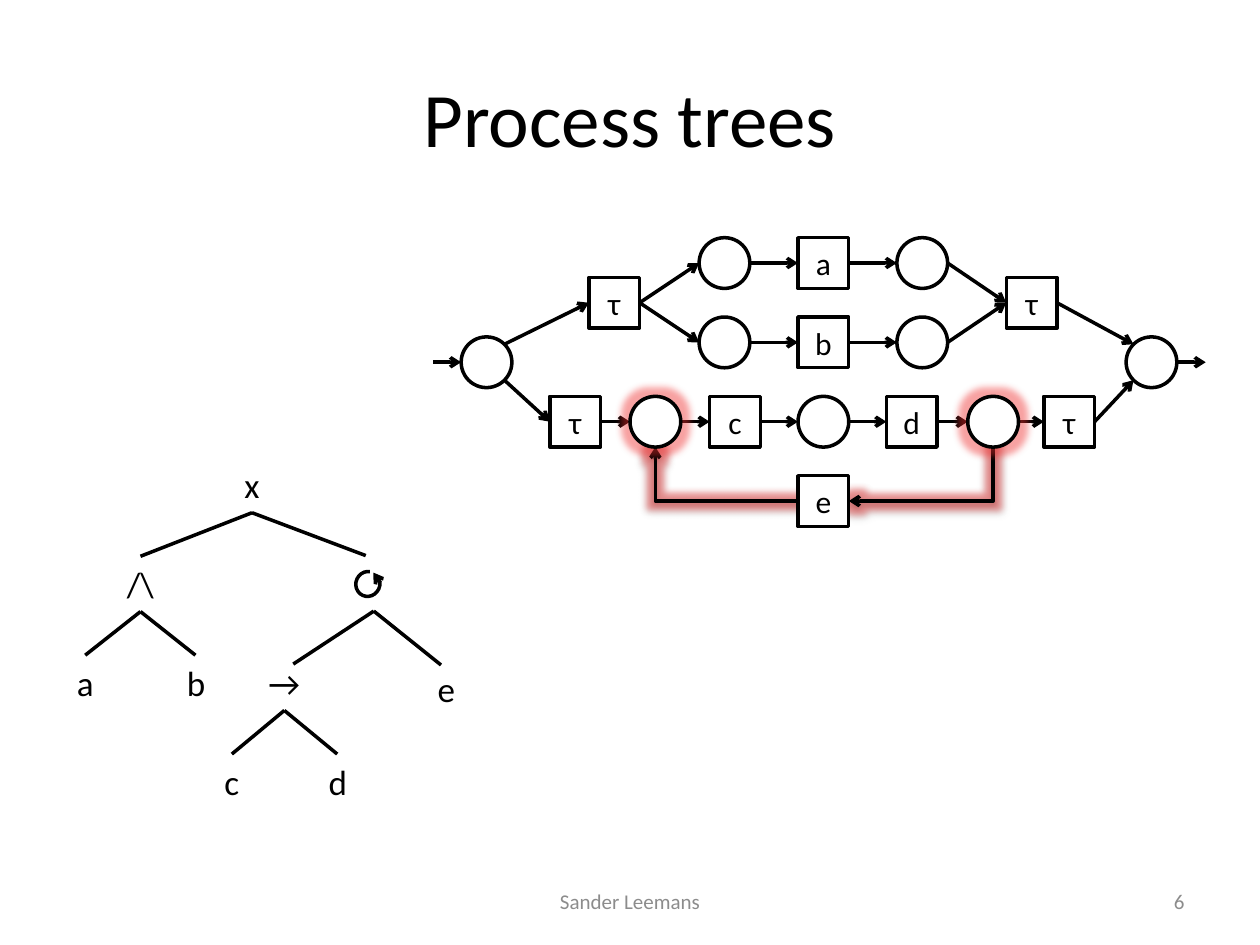
"""Build the process tree slide with its matching Petri net."""
from lxml import etree
from pptx import Presentation
from pptx import util as u
from pptx.dml.color import RGBColor
from pptx.enum import shapes, text
from pptx.oxml.ns import qn

COLOURS = {"ink": "000000", "paper": "FFFFFF", "muted": "8C8C8C", "glow": "F03030"}
TOP, LEFT, BOTTOM, RIGHT = range(4)
NODE, LABEL = 29, 31.6
ALIGN = text.PP_ALIGN


def rgb(name):
    return RGBColor.from_string(COLOURS[name])


def child(parent, tag, **attributes):
    element = etree.SubElement(parent, qn(tag))
    for key, value in attributes.items():
        element.set(key, str(value))
    return element


def write(shape, words, size=20, colour="ink", align=ALIGN.CENTER,
          anchor=text.MSO_ANCHOR.MIDDLE, wrap=True):
    frame = shape.text_frame
    frame.word_wrap, frame.vertical_anchor = wrap, anchor
    paragraph = frame.paragraphs[0]
    paragraph.alignment = align
    run = paragraph.add_run()
    run.text = words
    run.font.size, run.font.name = u.Pt(size), "Calibri"
    run.font.color.rgb = rgb(colour)


class Board:
    def __init__(self, slide, stroke=2):
        self.shapes, self.stroke = slide.shapes, stroke

    def outline(self, shape):
        shape.line.color.rgb = rgb("ink")
        shape.line.width = u.Pt(self.stroke)

    def glow(self, effects):
        colour = child(child(effects, "a:glow", rad=u.Pt(8)), "a:srgbClr", val=COLOURS["glow"])
        child(colour, "a:alpha", val=45000)

    def caption(self, words, left, top, width, height, **form):
        box = self.shapes.add_textbox(*map(u.Pt, (left, top, width, height)))
        write(box, words, **form)
        return box

    def label(self, words, x, top, width=24):
        box = self.caption(words, x - width / 2, top, width, LABEL,
                           anchor=text.MSO_ANCHOR.TOP, wrap=False)
        box.text_frame.auto_size = text.MSO_AUTO_SIZE.SHAPE_TO_FIT_TEXT
        return box

    def node(self, kind, x, y, words="", glowing=False):
        node = self.shapes.add_shape(kind, u.Pt(x - NODE / 2), u.Pt(y - NODE / 2),
                                     u.Pt(NODE), u.Pt(NODE))
        node.shadow.inherit = False
        node.fill.solid()
        node.fill.fore_color.rgb = rgb("paper")
        self.outline(node)
        if words:
            write(node, words, size=18)
        if glowing:
            self.glow(node._element.spPr.find(qn("a:effectLst")))
        return node

    def loop(self, x, y, width, height):
        loop = self.shapes.add_shape(shapes.MSO_SHAPE.ARC, u.Pt(x - width / 2),
                                     u.Pt(y - height / 2), u.Pt(width), u.Pt(height))
        for index, degrees in enumerate((180.44, 163.68)):
            loop.adjustments[index] = degrees * 0.6
        loop.rotation = 115
        loop.shadow.inherit = False
        loop.fill.background()
        self.outline(loop)
        child(loop.line._get_or_add_ln(), "a:headEnd", type="arrow")

    def line(self, begin, end, source=None, target=None, arrow=False,
             kind=shapes.MSO_CONNECTOR.STRAIGHT):
        line = self.shapes.add_connector(kind, *map(u.Pt, (*begin, *end)))
        if source:
            line.begin_connect(*source)
        if target:
            line.end_connect(*target)
        self.outline(line)
        if arrow:
            child(line.line._get_or_add_ln(), "a:tailEnd", type="arrow")
        child(line._element.spPr, "a:effectLst")
        return line

    def bend(self, begin, end, rotation=0):
        bend = self.line(begin, end, arrow=True, kind=shapes.MSO_CONNECTOR.ELBOW)
        properties = bend._element.spPr
        properties.find(qn("a:prstGeom")).set("prst", "bentConnector2")
        if rotation:
            properties.find(qn("a:xfrm")).set("rot", str(rotation * 60000))
        effects = properties.find(qn("a:effectLst"))
        self.glow(effects)
        shadow = child(effects, "a:outerShdw", blurRad=u.Pt(3.1), dist=u.Pt(1.6),
                       dir=90 * 60000, rotWithShape=0)
        child(child(shadow, "a:srgbClr", val=COLOURS["ink"]), "a:alpha", val=38000)


def draw_tree(board):
    top = [261.4 + 56.5 * level for level in range(4)]
    labels = {words: board.label(words, x, y, width) for words, x, y, width in (
        ("x", 144, top[0], 24), ("/\\", 80.3, top[1], 30), ("a", 48.7, top[2], 24),
        ("b", 111.7, top[2], 24), ("→", 162.5, top[2], 33), ("e", 255, 378, 24),
        ("c", 132.5, top[3], 24), ("d", 192.7, top[3], 24))}
    for parent, *children in (("x", "/\\"), ("/\\", "a", "b"), ("→", "c", "d")):
        for name in children:
            board.line((0, 0), (0, 0), (labels[parent], BOTTOM), (labels[name], TOP))
    board.line((144, 292.5), (209, 317.5), source=(labels["x"], BOTTOM))
    for end in ((167.6, 379.5), (252, 380)):
        board.line((213.6, 349.2), end)
    board.loop(210.2, 333.7, 14.4, 13.7)


def draw_net(board):
    row = [150.3 + 45.35 * index for index in range(4)]
    middle, split, half = 207, 173, NODE / 2
    places = {"start": (278, middle), "end": (658, middle),
              "before a": (414, row[0]), "after a": (527, row[0]),
              "before b": (414, row[1]), "after b": (527, row[1]),
              "before c": (374.5, row[2]), "after c": (470.5, row[2]),
              "after d": (567.5, row[2])}
    steps = {"fork": ("τ", 351, split), "join": ("τ", 589.5, split),
             "enter": ("τ", 328.7, row[2]), "leave": ("τ", 611, row[2]),
             "a": ("a", 470.5, row[0]), "b": ("b", 470.5, row[1]),
             "c": ("c", 420, row[2]), "d": ("d", 521, row[2]),
             "e": ("e", 470.5, row[3])}

    e_x, e_y = steps["e"][1:]
    left, right = places["before c"][0], places["after d"][0]
    rim_y = row[2] + half
    centre_x, centre_y = (right + e_x + half) / 2, (rim_y + e_y) / 2
    across, down = (right - e_x - half) / 2, (e_y - rim_y) / 2
    board.bend((centre_x - down, centre_y - across), (centre_x + down, centre_y + across), 90)
    board.bend((e_x - half, e_y), (left, rim_y))

    boxes = {name: board.node(shapes.MSO_SHAPE.RECTANGLE, x, y, words)
             for name, (words, x, y) in steps.items()}

    def rim(place, step, side):
        x, y = places[place]
        if place not in ("start", "end"):
            return x + side * half, y
        reach = half * 0.71
        return x + side * reach, y + (reach if steps[step][2] > middle else -reach)

    flows = (("start", "fork"), ("start", "enter"), ("fork", "before a"),
             ("fork", "before b"), ("before a", "a"), ("a", "after a"),
             ("before b", "b"), ("b", "after b"), ("after a", "join"),
             ("after b", "join"), ("join", "end"), ("enter", "before c"),
             ("before c", "c"), ("c", "after c"), ("after c", "d"),
             ("d", "after d"), ("after d", "leave"), ("leave", "end"))
    for origin, goal in flows:
        if origin in places:
            board.line(rim(origin, goal, 1), (0, 0), target=(boxes[goal], LEFT), arrow=True)
        else:
            board.line((0, 0), rim(goal, origin, -1), source=(boxes[origin], RIGHT), arrow=True)
    for begin, end in ((247.5, places["start"][0] - half), (places["end"][0] + half, 689)):
        board.line((begin, middle), (end, middle), arrow=True)
    for name, (x, y) in places.items():
        board.node(shapes.MSO_SHAPE.OVAL, x, y, glowing=name in ("before c", "after d"))


def main():
    deck = Presentation()
    deck.slide_width, deck.slide_height = u.Pt(720), u.Pt(540)
    board = Board(deck.slides.add_slide(deck.slide_layouts[6]))
    board.caption("Process trees", 36, 21.6, 648, 90, size=44)
    board.caption("Sander Leemans", 246, 500.5, 228, 28.75, size=12, colour="muted")
    draw_tree(board)
    draw_net(board)
    board.caption("6", 516, 500.5, 168, 28.75, size=12, colour="muted", align=ALIGN.RIGHT)
    deck.save("out.pptx")


if __name__ == "__main__":
    main()
